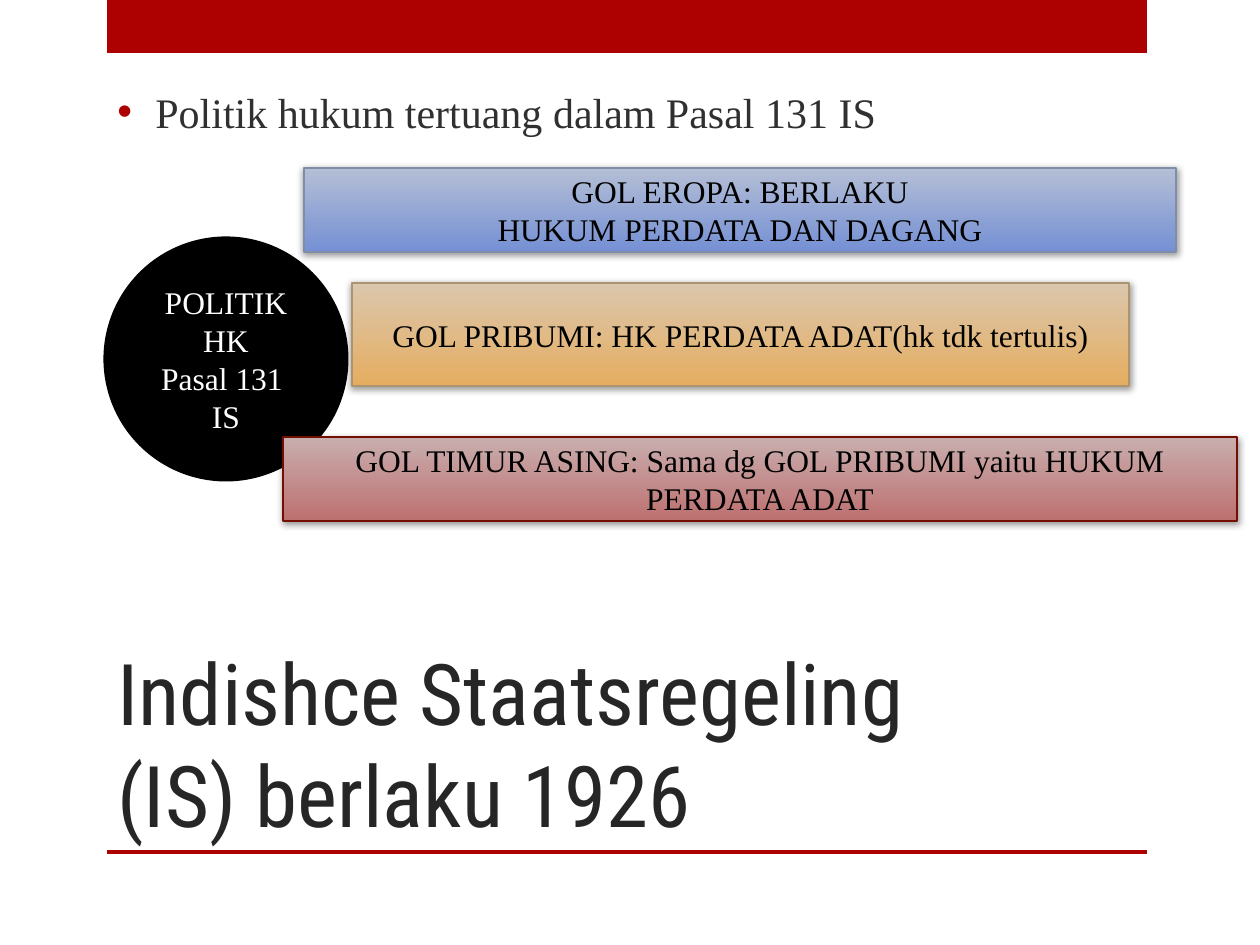
import pptx
import pptx.util
import pptx.dml.color
import pptx.enum.shapes
import pptx.enum.text
import pptx.oxml
import pptx.oxml.ns
from lxml import etree

# Content: places are left, top, width, height in px
SERIF, HEAD = "Times New Roman", "Roboto Condensed"
RED = "AD0101"
BANDS = [(107, 0, 1040, 53), (107, 850, 1040, 4)]
TITLE = ["Indishce Staatsregeling (IS) berlaku 1926"]
POINT = ["Politik hukum tertuang dalam Pasal 131 IS"]
DISC = ["POLITIK HK", "Pasal 131 ", "IS"]
# place, gradient top, gradient bottom, edge, lines
GROUPS = [
    ((352, 283, 777, 103), "DBC7AD", "E5AD60", "AC956E",
     ["GOL PRIBUMI: HK PERDATA ADAT(hk tdk tertulis)"]),
    ((304, 168, 872, 84), "B4BED5", "7590D4", "808DA9",
     ["GOL EROPA: BERLAKU", "HUKUM PERDATA DAN DAGANG"]),
    ((283, 437, 954, 84), "C9AEAE", "BD7070", "730E00",
     ["GOL TIMUR ASING: Sama dg GOL PRIBUMI yaitu HUKUM PERDATA ADAT"]),
]

PX = 914400 / 126
KIND = pptx.enum.shapes.MSO_SHAPE
ANCHOR = pptx.enum.text.MSO_ANCHOR
ALIGN = pptx.enum.text.PP_ALIGN


def emu(px):
    return round(px * PX)


def color(code):
    return pptx.dml.color.RGBColor.from_string(code)


def write(shape, lines, size, code, anchor, align=ALIGN.LEFT, font=SERIF):
    frame = shape.text_frame
    frame.word_wrap = True
    frame.vertical_anchor = anchor
    for i, line in enumerate(lines):
        para = frame.paragraphs[0] if i == 0 else frame.add_paragraph()
        para.text = line
        para.alignment = align
        para.font.size = pptx.util.Pt(size)
        para.font.name = font
        para.font.color.rgb = color(code)


def draw(kind, place, fill, edge=None, width=0):
    shape = slide.shapes.add_shape(kind, *map(emu, place))
    shape.shadow.inherit = False
    if isinstance(fill, tuple):
        shape.fill.gradient()
        shape.fill.gradient_angle = 270
        for stop, code, pos in zip(shape.fill.gradient_stops, fill, (0, 1)):
            stop.color.rgb = color(code)
            stop.position = pos
    else:
        shape.fill.solid()
        shape.fill.fore_color.rgb = color(fill)
    if edge:
        shape.line.color.rgb = color(edge)
        shape.line.width = pptx.util.Pt(width)
    else:
        shape.line.fill.background()
    return shape


def shade(shape):
    effects = shape.element.spPr.find(pptx.oxml.ns.qn("a:effectLst"))
    effects.append(pptx.oxml.parse_xml(
        f'<a:outerShdw {pptx.oxml.ns.nsdecls("a")} blurRad="50800" '
        'dist="12700" dir="5280000" algn="tl" rotWithShape="0">'
        '<a:srgbClr val="000000"><a:alpha val="40000"/></a:srgbClr>'
        '</a:outerShdw>'))


def bullet(para, mark, code, indent):
    props = para._p.get_or_add_pPr()
    props.set("marL", str(emu(indent)))
    props.set("indent", str(-emu(indent)))
    tint = etree.SubElement(props, pptx.oxml.ns.qn("a:buClr"))
    etree.SubElement(tint, pptx.oxml.ns.qn("a:srgbClr"), val=code)
    etree.SubElement(props, pptx.oxml.ns.qn("a:buFont"), typeface="Arial")
    etree.SubElement(props, pptx.oxml.ns.qn("a:buChar"), char=mark)


deck = pptx.Presentation()
deck.slide_width, deck.slide_height = emu(1260), emu(945)
slide = deck.slides.add_slide(deck.slide_layouts[6])

# Red band and rule
for place in BANDS:
    draw(KIND.RECTANGLE, place, RED)

# Title
box = slide.shapes.add_textbox(*map(emu, (105, 630, 935, 221)))
write(box, TITLE, 48.6, "262626", ANCHOR.BOTTOM, font=HEAD)

# Bullet point
box = slide.shapes.add_textbox(*map(emu, (105, 80, 1040, 73)))
bullet(box.text_frame.paragraphs[0], "•", RED, 38)
write(box, POINT, 24, "303030", ANCHOR.TOP)

# Disc
disc = draw(KIND.OVAL, (105, 238, 242, 242), "000000", "000000", 1.75)
write(disc, DISC, 18, "FFFFFF", ANCHOR.MIDDLE, ALIGN.CENTER)

# Group bars
for place, top, low, edge, lines in GROUPS:
    bar = draw(KIND.RECTANGLE, place, (top, low), edge, 1.25)
    shade(bar)
    write(bar, lines, 18, "000000", ANCHOR.MIDDLE, ALIGN.CENTER)

deck.save("out.pptx")
